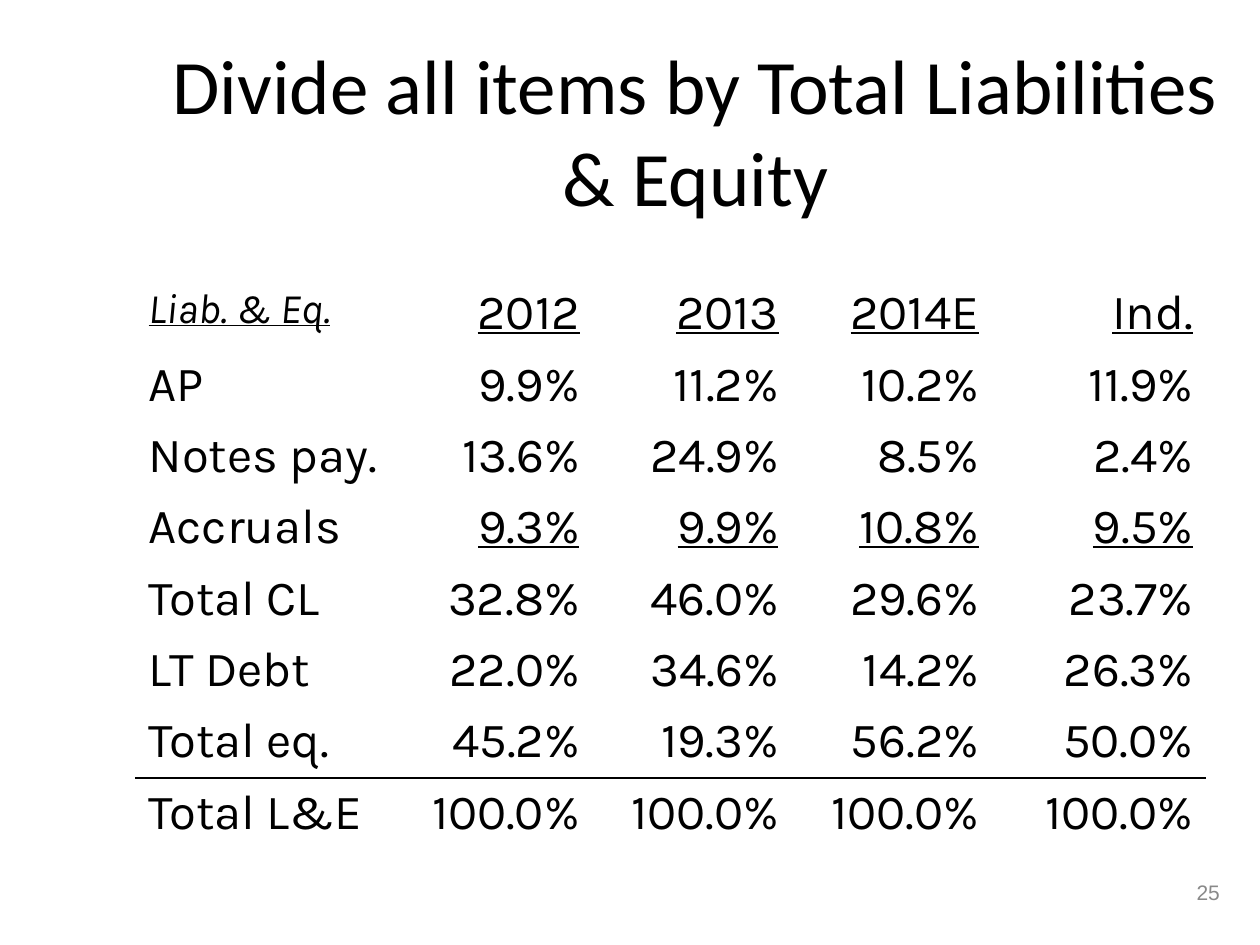
from lxml import etree
from pptx import Presentation
from pptx.dml.color import RGBColor
from pptx.enum.text import MSO_ANCHOR, PP_ALIGN
from pptx.oxml.ns import qn
from pptx.util import Inches, Pt

LEFT, CENTER, RIGHT = PP_ALIGN.LEFT, PP_ALIGN.CENTER, PP_ALIGN.RIGHT
MIDDLE = MSO_ANCHOR.MIDDLE
BLACK = RGBColor(0x00, 0x00, 0x00)
GRAY = RGBColor(0x89, 0x89, 0x89)

# Content
TITLE = "Divide all items by Total Liabilities & Equity"
PAGE_NUMBER = "25"
BALANCE = [
    ("Liab. & Eq.", "2012", "2013", "2014E", "Ind."),
    ("AP", "9.9%", "11.2%", "10.2%", "11.9%"),
    ("Notes pay.", "13.6%", "24.9%", "8.5%", "2.4%"),
    ("Accruals", "9.3%", "9.9%", "10.8%", "9.5%"),
    ("Total CL", "32.8%", "46.0%", "29.6%", "23.7%"),
    ("LT Debt", "22.0%", "34.6%", "14.2%", "26.3%"),
    ("Total eq.", "45.2%", "19.3%", "56.2%", "50.0%"),
    ("Total L&E", "100.0%", "100.0%", "100.0%", "100.0%"),
]
COLUMN_WIDTHS = (2.02, 1.6, 1.58, 1.59, 1.7)
TABLE_HEIGHT = 4.53
HEADER_ROW, ACCRUALS_ROW = 0, 3
TOTAL_ROW = len(BALANCE) - 1


def write(frame, text, align, color=BLACK, **font_values):
    paragraph = frame.paragraphs[0]
    paragraph.alignment = align
    run = paragraph.add_run()
    run.text = text
    run.font.color.rgb = color
    for name, value in font_values.items():
        setattr(run.font, name, value)
    return paragraph


def space_before(paragraph, percent):
    spacing = etree.Element(qn("a:spcBef"))
    etree.SubElement(spacing, qn("a:spcPct"), val=str(percent * 1000))
    paragraph._p.get_or_add_pPr().insert(0, spacing)


def rule(cell, side):
    """Draw a 1 pt line on one side of a cell; borders precede the fill."""
    line = etree.Element(qn(f"a:{side}"), w=str(Pt(1)))
    fill = etree.SubElement(line, qn("a:solidFill"))
    etree.SubElement(fill, qn("a:srgbClr"), val=str(BLACK))
    cell._tc.get_or_add_tcPr().insert(0, line)


def place(shape, left, top, width, height):
    shape.left, shape.top = Inches(left), Inches(top)
    shape.width, shape.height = Inches(width), Inches(height)


presentation = Presentation()
presentation.slide_width, presentation.slide_height = Inches(10), Inches(7.5)
slide = presentation.slides.add_slide(presentation.slide_layouts[5])

# Title
title = slide.shapes.title
place(title, 1.26, 0.23, 8.52, 1.6)
title.text_frame.vertical_anchor = MIDDLE
write(title.text_frame, TITLE, CENTER, name="Calibri", size=Pt(44))

# Common-size balance sheet
table = slide.shapes.add_table(
    len(BALANCE), len(COLUMN_WIDTHS), Inches(1.08), Inches(2.21),
    Inches(sum(COLUMN_WIDTHS)), Inches(TABLE_HEIGHT)).table
table.first_row = table.horz_banding = False
for column, width in zip(table.columns, COLUMN_WIDTHS):
    column.width = Inches(width)

for r, items in enumerate(BALANCE):
    table.rows[r].height = Inches(TABLE_HEIGHT / len(BALANCE))
    for c, item in enumerate(items):
        cell = table.cell(r, c)
        cell.fill.background()
        corner = r == HEADER_ROW and c == 0
        underlined = r == HEADER_ROW or (r == ACCRUALS_ROW and c > 0)
        paragraph = write(
            cell.text_frame, item, RIGHT if c else LEFT, name="Karla",
            size=Pt(24 if corner else 28), italic=corner, underline=underlined)
        space_before(paragraph, 20)
        if r == TOTAL_ROW - 1:
            rule(cell, "lnB")
        elif r == TOTAL_ROW:
            rule(cell, "lnT")

# Page number
page = slide.shapes.add_textbox(
    Inches(7.7), Inches(6.83), Inches(2.08), Inches(0.5))
page.text_frame.word_wrap = True
page.text_frame.vertical_anchor = MIDDLE
write(page.text_frame, PAGE_NUMBER, RIGHT, GRAY, name="Arial", size=Pt(12))

presentation.save("out.pptx")
